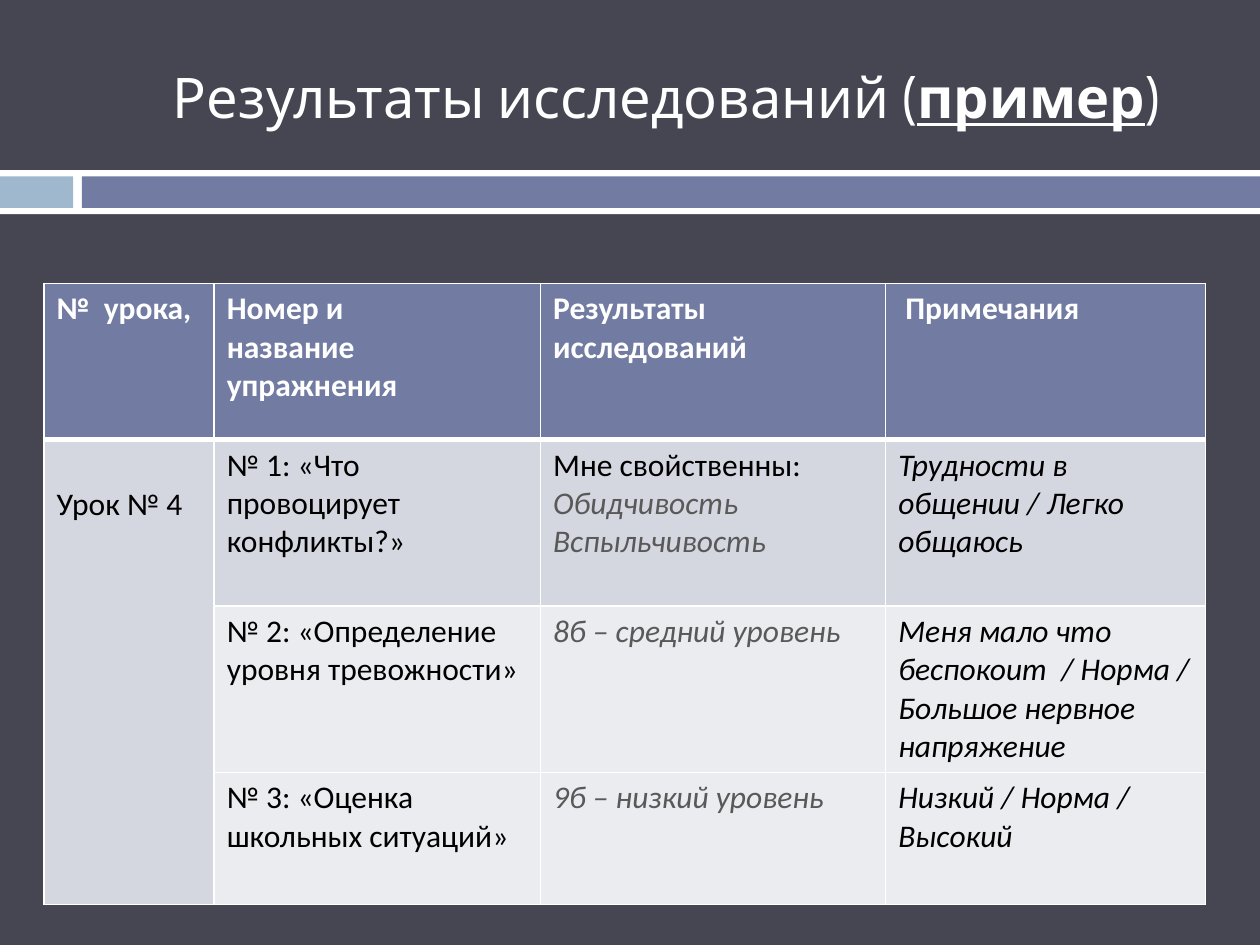
from pptx import Presentation
from pptx.dml.color import RGBColor
from pptx.enum.shapes import MSO_SHAPE
from pptx.enum.text import MSO_ANCHOR, PP_ALIGN
from pptx.oxml.ns import qn
from pptx.util import Inches, Pt
from lxml.etree import SubElement

# Content
COLORS = {"background": "464653", "white": "FFFFFF", "accent": "727CA3",
          "light_blue": "9FB8CD", "band": "D5D7E0", "pale": "EBECF0",
          "black": "000000", "gray": "595959"}
TITLE = [("Результаты исследований (", False), ("пример", True), (")", False)]
HEADER = [["№  урока,"], ["Номер и", "название  упражнения"],
          ["Результаты", "исследований"], [" Примечания"]]
LESSON = "Урок № 4"
EXERCISES = [
    (["№ 1: «Что провоцирует конфликты?»"],
     ["Мне свойственны:", "Обидчивость", "Вспыльчивость"],
     ["Трудности в общении / Легко общаюсь"]),
    (["№ 2: «Определение уровня тревожности»"],
     ["8б – средний уровень"],
     ["Меня мало что беспокоит  / Норма / Большое нервное напряжение"]),
    (["№ 3: «Оценка школьных ситуаций»"],
     ["9б – низкий уровень"],
     ["Низкий / Норма / Высокий"]),
]
PLAIN_LINE = "Мне свойственны:"

# Layout in inches
BARS = [(0, 1.35, 10, 0.35, "white"), (0, 1.4, 0.58, 0.25, "light_blue"),
        (0.65, 1.4, 9.35, 0.25, "accent")]
COLUMN_WIDTHS = [1.35, 2.59, 2.74, 2.54]
ROW_HEIGHTS = [1.24, 1.32, 1.32, 1.05]
TABLE_LEFT, TABLE_TOP = 0.35, 2.25
TEXT_LINE = 0.31


def color(name):
    return RGBColor.from_string(COLORS[name])


def style_font(font, name, size, color_name, bold=False, italic=False):
    font.name, font.size = name, Pt(size)
    font.bold, font.italic = bold, italic
    font.color.rgb = color(color_name)


def add_bar(slide, left, top, width, height, fill):
    bar = slide.shapes.add_shape(MSO_SHAPE.RECTANGLE, Inches(left), Inches(top),
                                 Inches(width), Inches(height))
    bar.shadow.inherit = False
    bar.fill.solid()
    bar.fill.fore_color.rgb = color(fill)
    bar.line.fill.background()


def style_cell(cell, fill, top=1, bottom=1):
    """Draw white borders (points) and the fill."""
    properties = cell._tc.get_or_add_tcPr()
    for side, width in (("L", 1), ("R", 1), ("T", top), ("B", bottom)):
        line = SubElement(properties, qn(f"a:ln{side}"), w=str(Pt(width)))
        solid = SubElement(line, qn("a:solidFill"))
        SubElement(solid, qn("a:srgbClr"), val=COLORS["white"])
    cell.fill.solid()
    cell.fill.fore_color.rgb = color(fill)


def write_cell(cell, lines, color_name, bold=False, italic=False):
    frame = cell.text_frame
    frame.text = "\n".join(lines)
    for paragraph in frame.paragraphs:
        plain = paragraph.text == PLAIN_LINE
        style_font(paragraph.font, "Calibri", 18, "black" if plain else color_name,
                   bold, italic and not plain)


def add_title(slide):
    box = slide.shapes.add_textbox(Inches(0.83), Inches(0.45), Inches(8.92), Inches(0.63))
    frame = box.text_frame
    frame.word_wrap = True
    frame.vertical_anchor = MSO_ANCHOR.MIDDLE
    paragraph = frame.paragraphs[0]
    paragraph.alignment = PP_ALIGN.CENTER
    for text, emphasized in TITLE:
        run = paragraph.add_run()
        run.text = text
        style_font(run.font, "Cabin", 32, "white", bold=emphasized)
        run.font.underline = emphasized


def add_results(slide):
    table = slide.shapes.add_table(
        len(ROW_HEIGHTS), len(COLUMN_WIDTHS), Inches(TABLE_LEFT), Inches(TABLE_TOP),
        Inches(sum(COLUMN_WIDTHS)), Inches(sum(ROW_HEIGHTS))).table
    for column, width in zip(table.columns, COLUMN_WIDTHS):
        column.width = Inches(width)
    for row, height in zip(table.rows, ROW_HEIGHTS):
        row.height = Inches(height)

    # Header row
    for column, lines in enumerate(HEADER):
        cell = table.cell(0, column)
        style_cell(cell, "accent", bottom=3)
        write_cell(cell, lines, "white", bold=True)

    # Exercise rows
    for row, texts in enumerate(EXERCISES, start=1):
        top = 3 if row == 1 else 1
        style_cell(table.cell(row, 0), "band", top)
        for column, lines in enumerate(texts, start=1):
            cell = table.cell(row, column)
            style_cell(cell, "band" if row == 1 else "pale", top)
            write_cell(cell, lines, "gray" if column == 2 else "black", italic=column > 1)

    # Lesson cell spans all exercises, its text starts one line lower
    lesson = table.cell(1, 0)
    lesson.merge(table.cell(len(EXERCISES), 0))
    lesson.margin_top = Inches(0.05 + TEXT_LINE)
    write_cell(lesson, [LESSON], "black")


def main():
    presentation = Presentation()
    presentation.slide_width, presentation.slide_height = Inches(10), Inches(7.5)
    slide = presentation.slides.add_slide(presentation.slide_layouts[6])
    slide.background.fill.solid()
    slide.background.fill.fore_color.rgb = color("background")
    for bar in BARS:
        add_bar(slide, *bar)
    add_title(slide)
    add_results(slide)
    presentation.save("out.pptx")


if __name__ == "__main__":
    main()
